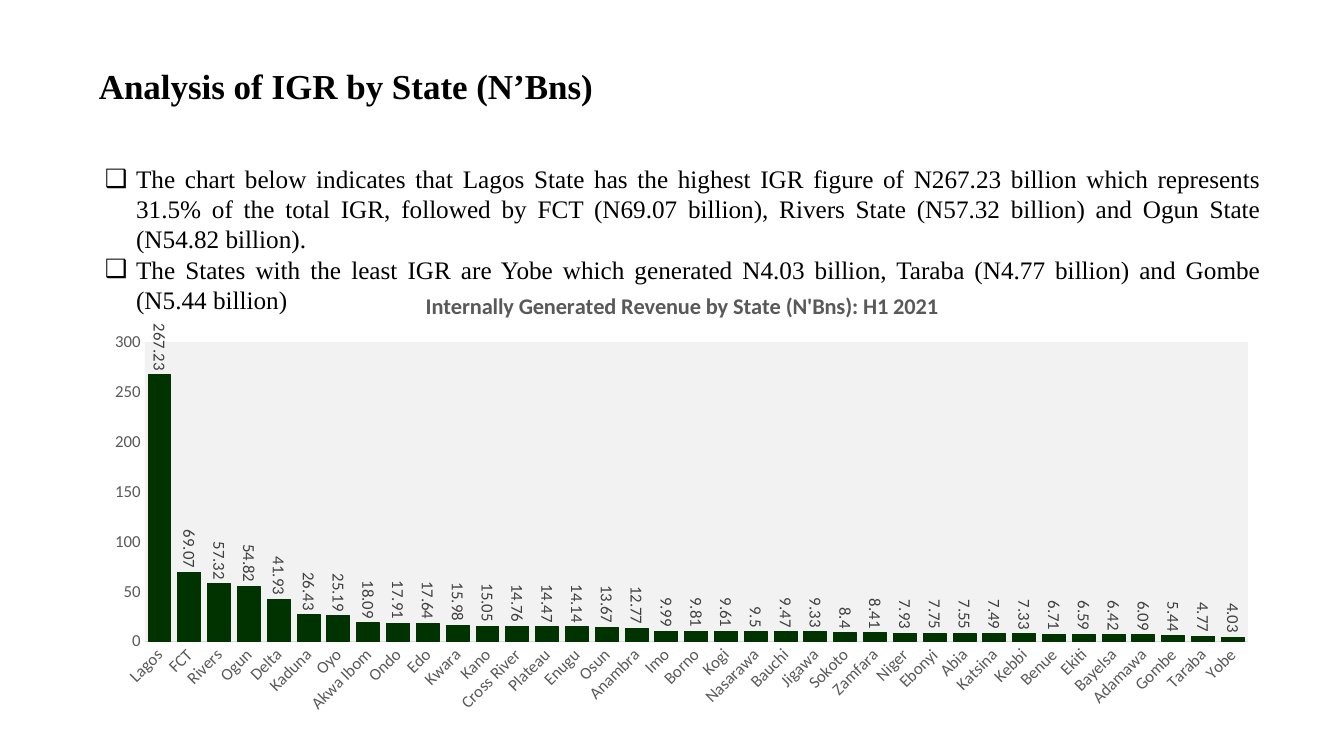
"""Build the slide on internally generated revenue (IGR) by state."""
from lxml import etree
from pptx import Presentation
from pptx.chart.data import CategoryChartData
from pptx.dml.color import RGBColor
from pptx.enum.chart import XL_CHART_TYPE, XL_LABEL_POSITION, XL_TICK_MARK
from pptx.enum.text import MSO_ANCHOR, MSO_AUTO_SIZE, PP_ALIGN
from pptx.oxml import parse_xml
from pptx.oxml.ns import nsdecls, qn
from pptx.util import Inches, Pt

COLUMNS = XL_CHART_TYPE.COLUMN_CLUSTERED
OUTSIDE_END = XL_LABEL_POSITION.OUTSIDE_END
NO_TICK = XL_TICK_MARK.NONE
MIDDLE, TOP = MSO_ANCHOR.MIDDLE, MSO_ANCHOR.TOP
NO_FIT = MSO_AUTO_SIZE.NONE
LEFT, JUSTIFY = PP_ALIGN.LEFT, PP_ALIGN.JUSTIFY

TITLE = "Analysis of IGR by State (N’Bns)"
FINDINGS = [
    "The chart below indicates that Lagos State has the highest IGR figure of N267.23 billion "
    "which represents 31.5% of the total IGR, followed by FCT (N69.07 billion), Rivers State "
    "(N57.32 billion) and Ogun State (N54.82 billion).",
    "The States with the least IGR are Yobe which generated N4.03 billion, Taraba "
    "(N4.77 billion) and Gombe (N5.44 billion)",
]
CHART_TITLE = "Internally Generated Revenue by State (N'Bns): H1 2021"
REVENUE = {
    "Lagos": 267.23, "FCT": 69.07, "Rivers": 57.32, "Ogun": 54.82, "Delta": 41.93,
    "Kaduna": 26.43, "Oyo": 25.19, "Akwa Ibom": 18.09, "Ondo": 17.91, "Edo": 17.64,
    "Kwara": 15.98, "Kano": 15.05, "Cross River": 14.76, "Plateau": 14.47, "Enugu": 14.14,
    "Osun": 13.67, "Anambra": 12.77, "Imo": 9.99, "Borno": 9.81, "Kogi": 9.61,
    "Nasarawa": 9.5, "Bauchi": 9.47, "Jigawa": 9.33, "Sokoto": 8.4, "Zamfara": 8.41,
    "Niger": 7.93, "Ebonyi": 7.75, "Abia": 7.55, "Katsina": 7.49, "Kebbi": 7.33,
    "Benue": 6.71, "Ekiti": 6.59, "Bayelsa": 6.42, "Adamawa": 6.09, "Gombe": 5.44,
    "Taraba": 4.77, "Yobe": 4.03,
}
COLORS = {"text": "000000", "axis": "595959", "axis_line": "D9D9D9",
          "label": "404040", "bar": "003300", "plot": "F2F2F2"}
SERIF, SANS = "Times New Roman", "Calibri"
PLOT_AREA = {"x": 0.044, "y": 0.155, "w": 0.936, "h": 0.664}


def color(name):
    return RGBColor.from_string(COLORS[name])


def style_font(font, face, size, color_name, bold=False):
    font.name, font.size, font.bold = face, Pt(size), bold
    font.color.rgb = color(color_name)


def place(shape, left, top, width, height):
    shape.left, shape.top = Inches(left), Inches(top)
    shape.width, shape.height = Inches(width), Inches(height)


def rotate_text(element, degrees):
    body = next(element.iter(qn("a:bodyPr")))
    body.set("rot", str(degrees * 60000))
    body.set("vert", "horz")


def write_title(box):
    place(box, 0.88, 0.32, 6.77, 1.1)
    frame = box.text_frame
    frame.text = TITLE
    frame.vertical_anchor, frame.auto_size = MIDDLE, NO_FIT
    para = frame.paragraphs[0]
    para.alignment, para.line_spacing = LEFT, 0.9
    style_font(para.runs[0].font, SERIF, 25, "text", True)


def write_findings(box):
    place(box, 0.94, 1.57, 11.67, 1.31)
    frame = box.text_frame
    frame.text = "\n".join(FINDINGS)
    frame.vertical_anchor, frame.auto_size = TOP, NO_FIT
    for para in frame.paragraphs:
        para.alignment, para.line_spacing = JUSTIFY, 1.0
        para.space_before = para.space_after = Pt(0)
        style_font(para.runs[0].font, SERIF, 18, "text")
        properties = para._p.get_or_add_pPr()
        properties.set("marL", str(Inches(0.31)))
        properties.set("indent", str(Inches(-0.31)))
        etree.SubElement(properties, qn("a:buChar")).set("char", "❑")


def format_plot_area(chart):
    area = next(chart._chartSpace.iter(qn("c:plotArea")))
    for layout in area.findall(qn("c:layout")):
        area.remove(layout)
    edges = "".join(f'<c:{key} val="{value}"/>' for key, value in PLOT_AREA.items())
    area.insert(0, parse_xml(
        f'<c:layout {nsdecls("c")}><c:manualLayout><c:layoutTarget val="inner"/>'
        f'<c:xMode val="edge"/><c:yMode val="edge"/>{edges}</c:manualLayout></c:layout>'))
    area.append(parse_xml(
        f'<c:spPr {nsdecls("c", "a")}><a:solidFill><a:srgbClr val="{COLORS["plot"]}"/>'
        '</a:solidFill></c:spPr>'))


def add_revenue_chart(page):
    data = CategoryChartData()
    data.categories = list(REVENUE)
    data.add_series("Series 1", list(REVENUE.values()))
    graphic = page.shapes.add_chart(
        COLUMNS, Inches(0.92), Inches(2.7), Inches(11.69), Inches(4.47), data)
    chart = graphic.chart
    style_font(chart.font, SANS, 12, "text")
    chart.has_legend = False
    chart.has_title = True
    heading = chart.chart_title.text_frame
    heading.text = CHART_TITLE
    style_font(heading.paragraphs[0].runs[0].font, SANS, 16, "axis", True)

    for axis in (chart.category_axis, chart.value_axis):
        axis.major_tick_mark = axis.minor_tick_mark = NO_TICK
        axis.has_major_gridlines = False
        style_font(axis.tick_labels.font, SANS, 12, "axis")
    chart.value_axis.format.line.fill.background()
    chart.value_axis.minimum_scale, chart.value_axis.maximum_scale = 0, 300
    chart.value_axis.major_unit = 50
    base_line = chart.category_axis.format.line
    base_line.color.rgb, base_line.width = color("axis_line"), Pt(0.75)
    rotate_text(chart.category_axis._element, -45)

    plot = chart.plots[0]
    plot.gap_width, plot.overlap, plot.vary_by_categories = 30, -27, False
    bars = plot.series[0]
    bars.invert_if_negative = False
    bars.format.fill.solid()
    bars.format.fill.fore_color.rgb = color("bar")
    bars.format.line.color.rgb, bars.format.line.width = color("bar"), Pt(0.75)
    labels = bars.data_labels
    labels.show_value, labels.position = True, OUTSIDE_END
    style_font(labels.font, SANS, 12, "label")
    rotate_text(labels._element, 90)
    format_plot_area(chart)
    return graphic


def main():
    deck = Presentation()
    deck.slide_width, deck.slide_height = Inches(13.33), Inches(7.5)
    page = deck.slides.add_slide(deck.slide_layouts[1])
    title = page.shapes.title
    write_title(title)
    write_findings(page.placeholders[1])
    graphic = add_revenue_chart(page)
    title._element.addprevious(graphic._element)
    deck.save("out.pptx")


if __name__ == "__main__":
    main()
